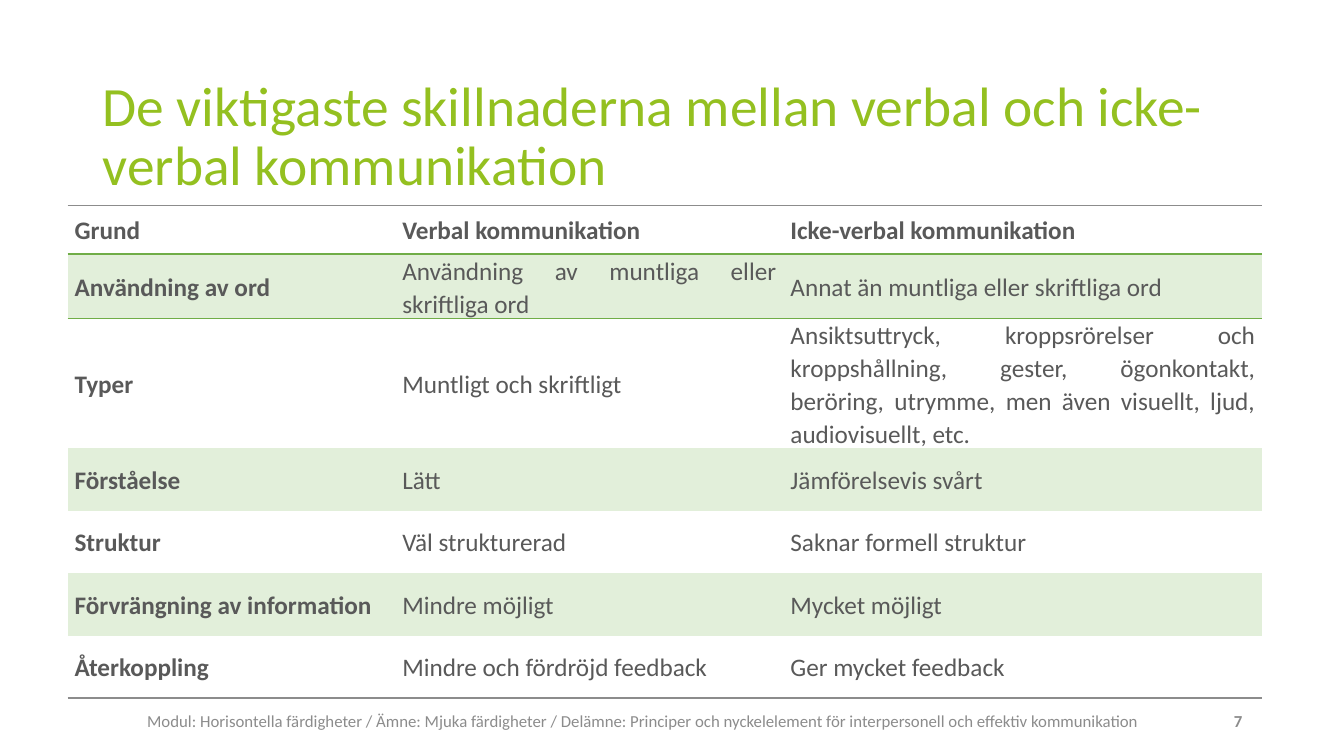
from lxml import etree
from pptx import Presentation
from pptx.dml.color import RGBColor
from pptx.enum import text
from pptx.oxml import ns
from pptx.util import Inches, Pt

FONT = "Calibri"
LIME, GREEN, PALE_GREEN = "94C020", "70AD47", "E2EFDA"
DARK_GRAY, GRAY = "595959", "8C8C8C"
NO_STYLE = "{2D5ABB26-0587-4C30-8999-92F81FD0307C}"
COLUMN_WIDTHS = [3.25, 3.85, 4.75]
ROW_HEIGHTS = [0.48, 0.59, 1.28, 0.62, 0.62, 0.62, 0.62]
DIFFERENCES = [
    ("Grund", "Verbal kommunikation", "Icke-verbal kommunikation"),
    ("Användning av ord", "Användning av muntliga eller skriftliga ord",
     "Annat än muntliga eller skriftliga ord"),
    ("Typer", "Muntligt och skriftligt",
     "Ansiktsuttryck, kroppsrörelser och kroppshållning, gester, ögonkontakt, "
     "beröring, utrymme, men även visuellt, ljud, audiovisuellt, etc."),
    ("Förståelse", "Lätt", "Jämförelsevis svårt"),
    ("Struktur", "Väl strukturerad", "Saknar formell struktur"),
    ("Förvrängning av information", "Mindre möjligt", "Mycket möjligt"),
    ("Återkoppling", "Mindre och fördröjd feedback", "Ger mycket feedback"),
]


def color(value):
    return RGBColor.from_string(value)


def write(text_frame, content, size, fill, align, spacing=1.0, bold=False):
    text_frame.text = content
    paragraph = text_frame.paragraphs[0]
    paragraph.alignment = align
    paragraph.line_spacing = spacing
    font = paragraph.runs[0].font
    font.name = FONT
    font.size = Pt(size)
    font.bold = bold
    font.color.rgb = color(fill)
    return paragraph


def add_label(slide, box, content, size, fill, align, spacing=1.0, bold=False):
    shape = slide.shapes.add_textbox(*map(Inches, box))
    shape.text_frame.word_wrap = True
    shape.text_frame.vertical_anchor = text.MSO_ANCHOR.MIDDLE
    write(shape.text_frame, content, size, fill, align, spacing, bold)


def add_border(cell, side, fill):
    properties = cell._tc.get_or_add_tcPr()
    line = etree.Element(ns.qn(f"a:{side}"), w=str(Pt(1)))
    solid = etree.SubElement(line, ns.qn("a:solidFill"))
    etree.SubElement(solid, ns.qn("a:srgbClr"), val=fill)
    borders = [child for child in properties if child.tag.startswith(ns.qn("a:ln"))]
    properties.insert(len(borders), line)


def format_cell(cell, content, bold, banded):
    cell.margin_left = cell.margin_right = Inches(0.07)
    cell.margin_top = cell.margin_bottom = 0
    cell.vertical_anchor = text.MSO_ANCHOR.MIDDLE
    paragraph = write(cell.text_frame, content, 18, DARK_GRAY,
                      text.PP_ALIGN.JUSTIFY, 1.07, bold)
    paragraph.space_after = Pt(11.2)
    if banded:
        cell.fill.solid()
        cell.fill.fore_color.rgb = color(PALE_GREEN)
    else:
        cell.fill.background()


def add_differences(slide):
    frame = slide.shapes.add_table(
        len(ROW_HEIGHTS), len(COLUMN_WIDTHS), Inches(0.67), Inches(2.04),
        Inches(sum(COLUMN_WIDTHS)), Inches(sum(ROW_HEIGHTS)))
    table = frame.table
    table.horz_banding = False
    table._tbl.tblPr.find(ns.qn("a:tableStyleId")).text = NO_STYLE
    for column, width in zip(table.columns, COLUMN_WIDTHS):
        column.width = Inches(width)
    for row, height in zip(table.rows, ROW_HEIGHTS):
        row.height = Inches(height)
    for i, contents in enumerate(DIFFERENCES):
        for j, content in enumerate(contents):
            format_cell(table.cell(i, j), content, i == 0 or j == 0, i % 2 == 1)
    for j in range(len(COLUMN_WIDTHS)):
        add_border(table.cell(0, j), "lnT", GRAY)
        add_border(table.cell(0, j), "lnB", GREEN)
        add_border(table.cell(1, j), "lnT", GREEN)
        add_border(table.cell(len(ROW_HEIGHTS) - 1, j), "lnB", GRAY)


def main():
    presentation = Presentation()
    presentation.slide_width = Inches(13.33)
    presentation.slide_height = Inches(7.5)
    slide = presentation.slides.add_slide(presentation.slide_layouts[6])
    add_label(slide, (0.92, 0.89, 11.5, 0.96),
              "De viktigaste skillnaderna mellan verbal och icke-verbal kommunikation",
              39.6, LIME, text.PP_ALIGN.LEFT, 0.9)
    add_label(slide, (0.92, 6.82, 10.92, 0.66),
              "Modul: Horisontella färdigheter / Ämne: Mjuka färdigheter / Delämne: "
              "Principer och nyckelelement för interpersonell och effektiv kommunikation",
              12, GRAY, text.PP_ALIGN.CENTER)
    add_label(slide, (11.92, 6.95, 0.5, 0.4), "7", 12, GRAY,
              text.PP_ALIGN.RIGHT, bold=True)
    add_differences(slide)
    presentation.save("out.pptx")


if __name__ == "__main__":
    main()
